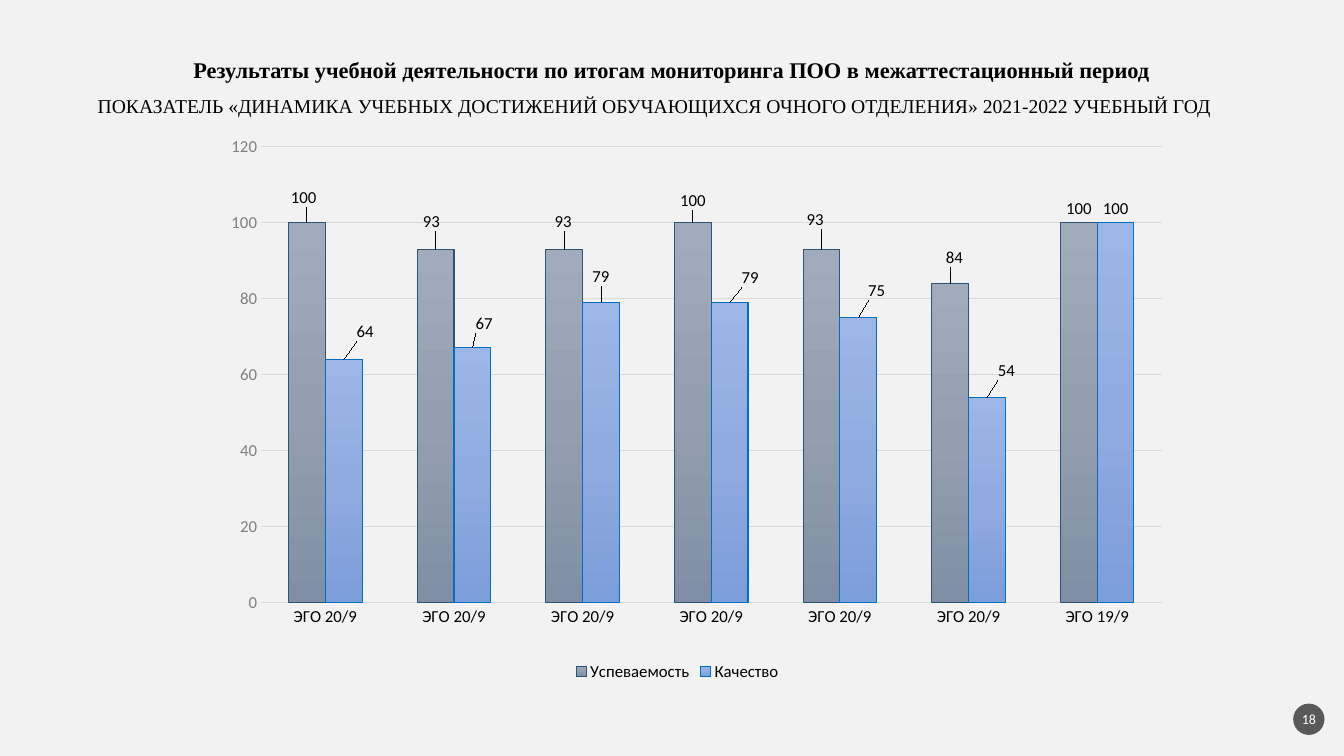
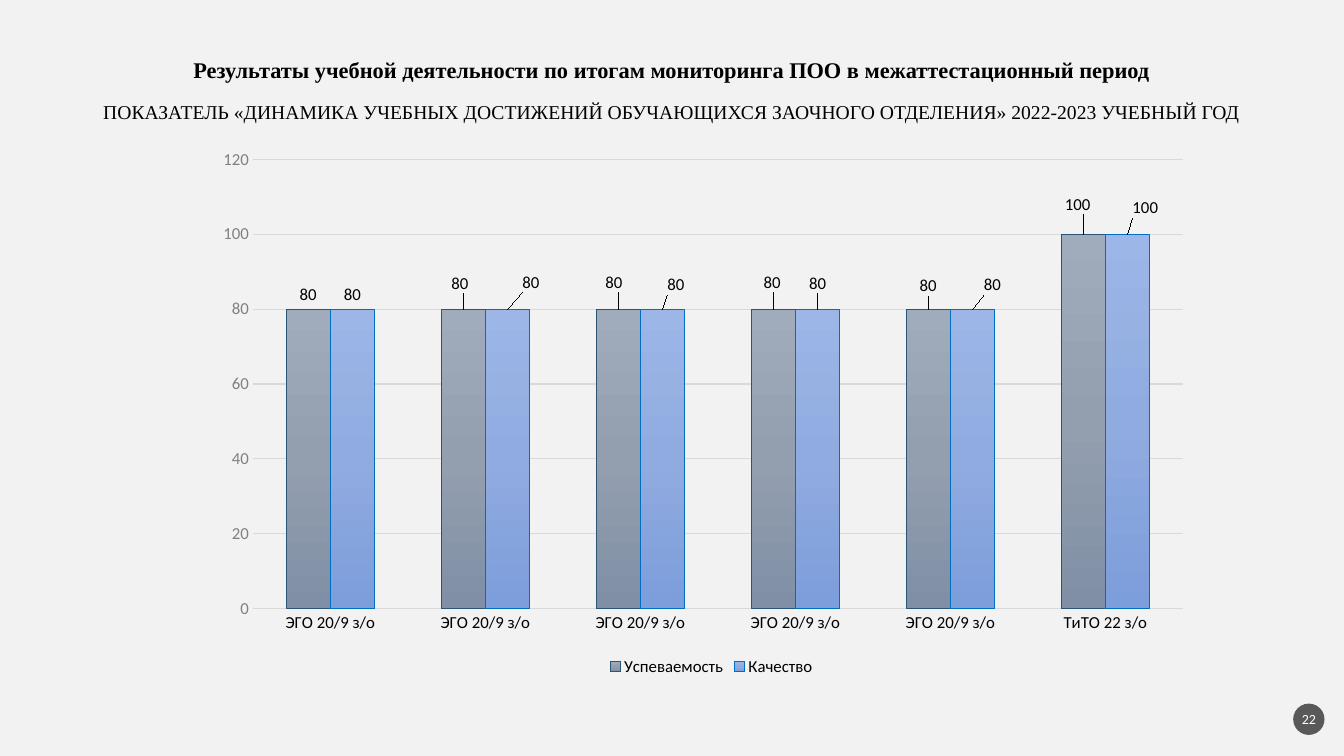
from copy import deepcopy

from lxml.etree import SubElement
from pptx import Presentation
from pptx.chart.data import CategoryChartData
from pptx.dml.color import RGBColor
from pptx.enum.chart import XL_CHART_TYPE, XL_LABEL_POSITION, XL_LEGEND_POSITION, XL_TICK_MARK
from pptx.enum.shapes import MSO_SHAPE
from pptx.enum.text import MSO_ANCHOR, PP_ALIGN
from pptx.oxml.ns import qn
from pptx.util import Cm, Pt

BACKGROUND = RGBColor(0xF2, 0xF2, 0xF2)
BLACK = RGBColor(0x00, 0x00, 0x00)
WHITE = RGBColor(0xFF, 0xFF, 0xFF)
BADGE = RGBColor(0x59, 0x59, 0x59)
AXIS_TEXT = RGBColor(0x80, 0x80, 0x80)
GRID = RGBColor(0xD9, 0xD9, 0xD9)
GRAY_TOP = RGBColor(0xA0, 0xAB, 0xBB)
GRAY_MIDDLE = RGBColor(0x93, 0x9F, 0xAF)
GRAY_BOTTOM = RGBColor(0x80, 0x8F, 0xA5)
GRAY_LINE = RGBColor(0x2B, 0x54, 0x77)
BLUE_TOP = RGBColor(0x9D, 0xB6, 0xE8)
BLUE_MIDDLE = RGBColor(0x90, 0xAB, 0xDF)
BLUE_BOTTOM = RGBColor(0x7C, 0x9E, 0xDB)
BLUE_LINE = RGBColor(0x00, 0x6F, 0xC3)

HEADING_FONT = "Times New Roman"
BODY_FONT = "Calibri"
TITLE = "Результаты учебной деятельности по итогам мониторинга ПОО в межаттестационный период"
TITLE_BOX = (1.19, 1.19, 31.47, 1.19)
BADGE_BOX = (32.59, 17.73, 0.79, 0.79)

SERIES_STYLES = [
    ("Успеваемость", (GRAY_TOP, GRAY_MIDDLE, GRAY_BOTTOM), GRAY_LINE),
    ("Качество", (BLUE_TOP, BLUE_MIDDLE, BLUE_BOTTOM), BLUE_LINE),
]

# Plot areas and label shifts are in thousandths of the chart's width and height.
SLIDES = [
    {
        "number": "18",
        "subtitle": "ПОКАЗАТЕЛЬ «ДИНАМИКА УЧЕБНЫХ ДОСТИЖЕНИЙ ОБУЧАЮЩИХСЯ ОЧНОГО ОТДЕЛЕНИЯ» 2021-2022 УЧЕБНЫЙ ГОД",
        "subtitle_box": (1.45, 2.24, 30.1, 0.86),
        "chart_box": (3.48, 3.43, 27.18, 13.84),
        "plot_area": (114, 19, 835, 830),
        "categories": ["ЭГО 20/9"] * 6 + ["ЭГО 19/9"],
        "values": [(100, 93, 93, 100, 93, 84, 100), (64, 67, 79, 79, 75, 54, 100)],
        "first_shifted": 0,
        "label_shifts": [
            [(-3, -20), (-4, -24), (-1, -24), (0, -15), (-6, -29), (4, -22)],
            [(20, -25), (11, -18), (0, -21), (19, -19), (17, -23), (18, -23)],
        ],
    },
    {
        "number": "22",
        "subtitle": "ПОКАЗАТЕЛЬ «ДИНАМИКА УЧЕБНЫХ ДОСТИЖЕНИЙ ОБУЧАЮЩИХСЯ ЗАОЧНОГО ОТДЕЛЕНИЯ» 2022-2023 УЧЕБНЫЙ ГОД",
        "subtitle_box": (1.65, 2.39, 30.56, 0.86),
        "chart_box": (3.94, 3.76, 27.97, 13.39),
        "plot_area": (87, 19, 838, 846),
        "categories": ["ЭГО 20/9 з/о"] * 5 + ["ТиТО 22 з/о"],
        "values": [(80, 80, 80, 80, 80, 100), (80, 80, 80, 80, 80, 100)],
        "first_shifted": 1,
        "label_shifts": [
            [(-3, -21), (-4, -23), (-1, -23), (0, -17), (-5, -30)],
            [(21, -24), (12, -19), (0, -21), (18, -19), (16, -23)],
        ],
    },
]


def lengths(box):
    return [Cm(value) for value in box]


def write_text(shape, text, font_name, size, color, bold=False):
    paragraph = shape.text_frame.paragraphs[0]
    paragraph.text = text
    paragraph.alignment = PP_ALIGN.CENTER
    paragraph.font.name = font_name
    paragraph.font.size = Pt(size)
    paragraph.font.color.rgb = color
    paragraph.font.bold = bold
    return paragraph


def center_without_margins(text_frame):
    text_frame.vertical_anchor = MSO_ANCHOR.MIDDLE
    text_frame.margin_left = text_frame.margin_right = 0
    text_frame.margin_top = text_frame.margin_bottom = 0


def add_text(slide, box, text, size, bold=False):
    shape = slide.shapes.add_textbox(*lengths(box))
    shape.text_frame.word_wrap = True
    return shape, write_text(shape, text, HEADING_FONT, size, BLACK, bold)


def add_title(slide):
    shape, paragraph = add_text(slide, TITLE_BOX, TITLE, 16, bold=True)
    center_without_margins(shape.text_frame)
    paragraph.line_spacing = 0.9


def add_badge(slide, number):
    badge = slide.shapes.add_shape(MSO_SHAPE.OVAL, *lengths(BADGE_BOX))
    badge.shadow.inherit = False
    badge.fill.solid()
    badge.fill.fore_color.rgb = BADGE
    badge.line.fill.background()
    center_without_margins(badge.text_frame)
    badge.text_frame.word_wrap = False
    write_text(badge, number, BODY_FONT, 10, WHITE)


def set_layout(parent, index, settings):
    for old_layout in parent.findall(qn("c:layout")):
        parent.remove(old_layout)
    layout = SubElement(parent, qn("c:layout"))
    manual = SubElement(layout, qn("c:manualLayout"))
    for name, value in settings:
        SubElement(manual, qn(f"c:{name}")).set("val", str(value))
    parent.insert(index, layout)


def place_plot(chart, plot_area):
    settings = [("layoutTarget", "inner"), ("xMode", "edge"), ("yMode", "edge")]
    settings += [(name, value / 1000) for name, value in zip("xywh", plot_area)]
    set_layout(chart.element.find(".//" + qn("c:plotArea")), 0, settings)


def shift_label(series, index, shift):
    series.points[index].data_label.position = XL_LABEL_POSITION.OUTSIDE_END
    for label in series.data_labels._element.findall(qn("c:dLbl")):
        if label.find(qn("c:idx")).get("val") == str(index):
            set_layout(label, 1, [(name, value / 1000) for name, value in zip("xy", shift)])


def style_series(series, colors, line_color):
    fill = series.format.fill
    fill.gradient()
    fill.gradient_angle = 270
    stop_list = series._element.find(".//" + qn("a:gsLst"))
    stop_list.insert(1, deepcopy(stop_list[0]))
    for stop, position, color in zip(fill.gradient_stops, (0, 0.5, 1), colors):
        stop.position = position
        stop.color.rgb = color
    series.format.line.color.rgb = line_color
    series.format.line.width = Pt(0.75)
    series.invert_if_negative = False
    series.data_labels.show_value = True
    series.data_labels.position = XL_LABEL_POSITION.OUTSIDE_END


def style_axes(chart):
    for axis in (chart.category_axis, chart.value_axis):
        axis.major_tick_mark = axis.minor_tick_mark = XL_TICK_MARK.NONE
        axis.format.line.fill.background()
        axis.tick_labels.font.size = Pt(12)
    chart.category_axis.tick_labels.font.color.rgb = BLACK
    value_axis = chart.value_axis
    value_axis.tick_labels.font.color.rgb = AXIS_TEXT
    value_axis.minimum_scale = 0
    value_axis.maximum_scale = 120
    value_axis.major_unit = 20
    value_axis.major_gridlines.format.line.color.rgb = GRID
    value_axis.major_gridlines.format.line.width = Pt(0.75)


def add_results_chart(slide, content):
    data = CategoryChartData()
    data.categories = content["categories"]
    for (name, _, _), values in zip(SERIES_STYLES, content["values"]):
        data.add_series(name, values)
    frame = slide.shapes.add_chart(
        XL_CHART_TYPE.COLUMN_CLUSTERED, *lengths(content["chart_box"]), data
    )
    chart = frame.chart
    chart.has_title = False
    chart.font.name = BODY_FONT
    chart.font.size = Pt(12)
    chart.font.color.rgb = BLACK
    chart.has_legend = True
    chart.legend.position = XL_LEGEND_POSITION.BOTTOM
    chart.legend.include_in_layout = False
    style_axes(chart)
    place_plot(chart, content["plot_area"])
    plot = chart.plots[0]
    plot.vary_by_categories = False
    plot.gap_width = 150
    plot.overlap = 0
    for series, (_, colors, line_color), shifts in zip(
        plot.series, SERIES_STYLES, content["label_shifts"]
    ):
        style_series(series, colors, line_color)
        for index, shift in enumerate(shifts, content["first_shifted"]):
            shift_label(series, index, shift)


def main():
    presentation = Presentation()
    presentation.slide_width = Cm(33.87)
    presentation.slide_height = Cm(19.05)
    background = presentation.slide_master.background.fill
    background.solid()
    background.fore_color.rgb = BACKGROUND
    for content in SLIDES:
        slide = presentation.slides.add_slide(presentation.slide_layouts[6])
        add_title(slide)
        add_badge(slide, content["number"])
        add_results_chart(slide, content)
        add_text(slide, content["subtitle_box"], content["subtitle"], 14)
    presentation.save("out.pptx")


if __name__ == "__main__":
    main()
